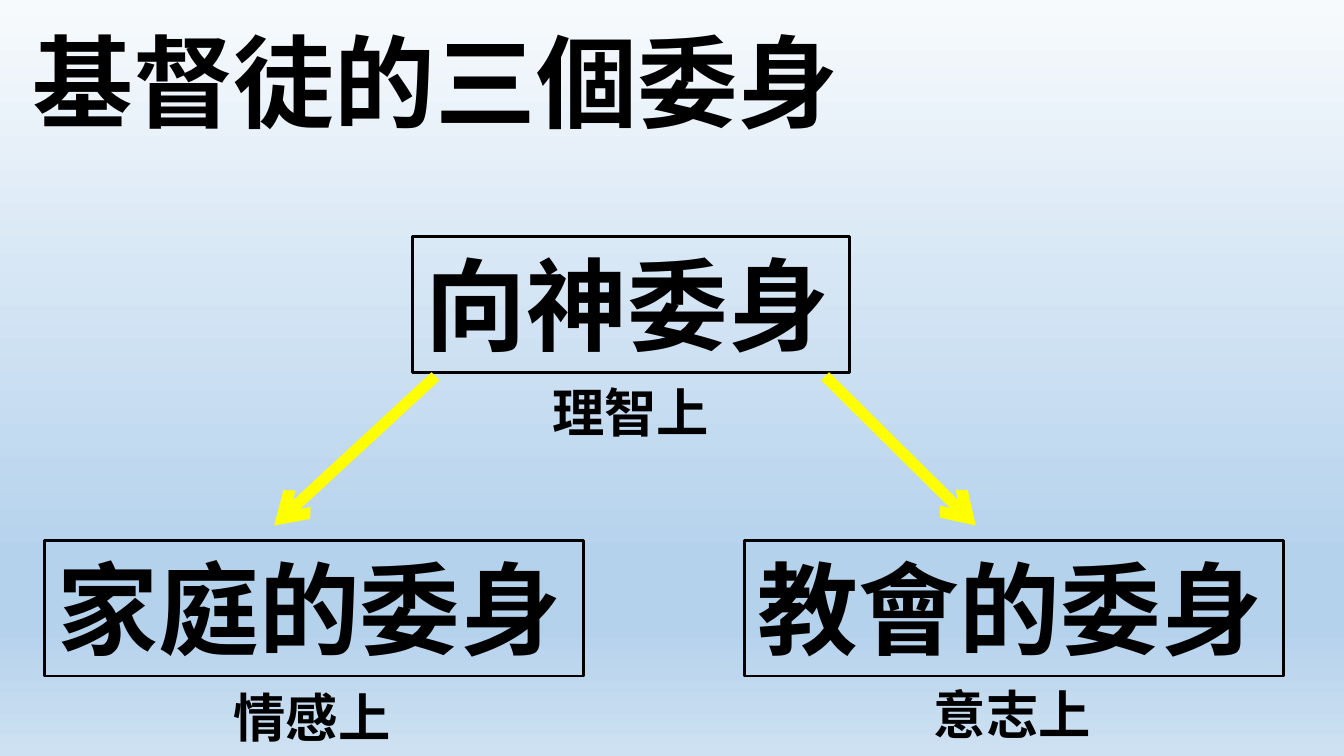
from pptx import Presentation
from pptx.dml.color import RGBColor
from pptx.enum.shapes import MSO_CONNECTOR
from pptx.enum.text import MSO_AUTO_SIZE, PP_ALIGN
from pptx.oxml.ns import qn
from pptx.util import Inches, Pt
from lxml.etree import SubElement
from copy import deepcopy

FONT = "Noto Sans CJK SC"
COLORS = {"text": "000000", "arrow": "FFFF00", "top": "F7FAFD",
          "middle": "B5D2EC", "bottom": "CEE1F2"}


def add_text(slide, text, left, top, width, height, size, wrap=False):
    box = slide.shapes.add_textbox(Inches(left), Inches(top), Inches(width), Inches(height))
    frame = box.text_frame
    frame.word_wrap = wrap
    frame.auto_size = MSO_AUTO_SIZE.SHAPE_TO_FIT_TEXT
    para = frame.paragraphs[0]
    para.text = text
    para.font.size = Pt(size)
    para.font.bold = True
    para.font.color.rgb = RGBColor.from_string(COLORS["text"])
    para.font.name = FONT
    east_asian = SubElement(para._p.pPr.find(qn("a:defRPr")), qn("a:ea"))
    east_asian.set("typeface", FONT)
    return box


deck = Presentation()
deck.slide_width = Inches(10)
deck.slide_height = Inches(10 * 9 / 16)
slide = deck.slides.add_slide(deck.slide_layouts[6])

fill = slide.background.fill
fill.gradient()
fill.gradient_angle = 270
stop_list = slide._element.find(".//" + qn("a:gsLst"))
for stop in list(stop_list)[:2]:
    stop_list.append(deepcopy(stop))
stops = [(0, "top"), (0.74, "middle"), (0.83, "middle"), (1, "bottom")]
for stop, (position, color) in zip(fill.gradient_stops, stops):
    stop.position = position
    stop.color.rgb = RGBColor.from_string(COLORS[color])

title = add_text(slide, "基督徒的三個委身", -1.06, 0.1, 8.6, 1.01, 54, wrap=True)
title.text_frame.paragraphs[0].alignment = PP_ALIGN.CENTER

commitments = [
    ("向神委身", 3.07, 1.76, 3.25),
    ("家庭的委身", 0.33, 4.02, 4.01),
    ("教會的委身", 5.54, 4.02, 4.01),
]
for text, left, top, width in commitments:
    box = add_text(slide, text, left, top, width, 1.01, 54)
    box.line.color.rgb = RGBColor.from_string(COLORS["text"])
    box.line.width = Pt(1.5)

for start, end in [(3.24, 2.04), (6.14, 7.26)]:
    arrow = slide.shapes.add_connector(
        MSO_CONNECTOR.STRAIGHT, Inches(start), Inches(2.8), Inches(end), Inches(3.91))
    arrow.line.color.rgb = RGBColor.from_string(COLORS["arrow"])
    arrow.line.width = Pt(6)
    SubElement(arrow._element.spPr.find(qn("a:ln")), qn("a:tailEnd")).set("type", "arrow")
    SubElement(arrow._element.spPr, qn("a:effectLst"))

for text, left, top in [("理智上", 4.01, 2.78), ("意志上", 6.85, 5.03), ("情感上", 1.64, 5.05)]:
    add_text(slide, text, left, top, 1.38, 0.57, 28)

deck.save("out.pptx")
